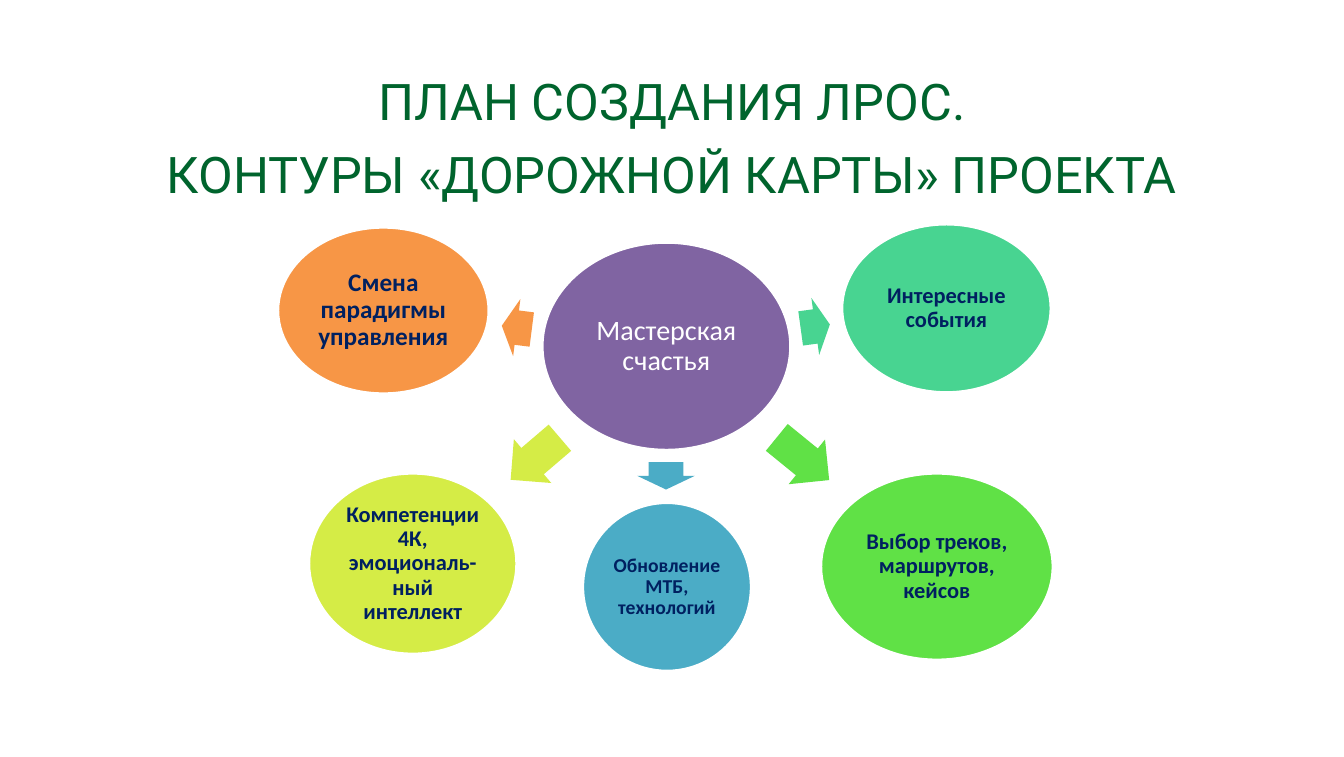
from pptx import Presentation
from pptx import util as u
from pptx.dml import color
from pptx.enum import shapes, text

WHITE, NAVY, GREEN = "FFFFFF", "002060", "00642D"
THEMES = [
    ("Обновление МТБ, технологий", 14, "4BACC6",
     (14.66, 12.65, 4.24, 4.24), (16.41, 11.25, 0.69), 90),
    ("Интересные события", 16, "48D491",
     (21.18, 5.64, 5.26, 4.24), (20.14, 7.49, 0.74), 352.2),
    ("Выбор треков, маршрутов, кейсов", 16, "60E146",
     (20.65, 11.91, 5.84, 4.7), (19.35, 10.82, 1.7), 39.2),
    ("Компетенции 4К, эмоциональ-ный интеллект", 16, "D5EC46",
     (7.77, 11.91, 5.23, 4.55), (12.65, 10.82, 1.63), 139.5),
    ("Смена парадигмы управления", 18, "F79646",
     (6.99, 5.72, 5.31, 4.19), (12.62, 7.52, 0.76), 187.2),
]


def rgb(code):
    return color.RGBColor.from_string(code)


def write(shape, words, size, ink, font="Calibri", bold=False, gap=0,
          inset=0.06, anchor=text.MSO_ANCHOR.MIDDLE):
    frame = shape.text_frame
    frame.text = words
    frame.word_wrap = True
    frame.auto_size = text.MSO_AUTO_SIZE.NONE
    frame.vertical_anchor = anchor
    frame.margin_left = frame.margin_right = u.Cm(inset)
    frame.margin_top = frame.margin_bottom = u.Cm(inset)
    for rank, para in enumerate(frame.paragraphs):
        para.alignment = text.PP_ALIGN.CENTER
        para.line_spacing = 0.9
        para.space_before = u.Pt(gap if rank else 0)
        face = para.font
        face.name, face.size, face.bold = font, u.Pt(size), bold
        face.color.rgb = rgb(ink)


def draw(slide, kind, box, fill):
    shape = slide.shapes.add_shape(kind, *map(u.Cm, box))
    shape.shadow.inherit = False
    shape.fill.solid()
    shape.fill.fore_color.rgb = rgb(fill)
    shape.line.fill.background()
    return shape


def bubble(slide, box, fill, words, size, ink=NAVY, bold=True):
    shape = draw(slide, shapes.MSO_SHAPE.OVAL, box, fill)
    shape.line.color.rgb = rgb(WHITE)
    shape.line.width = u.Pt(2)
    write(shape, words, size, ink, bold=bold)


def arrow(slide, spot, fill, turn):
    shape = draw(slide, shapes.MSO_SHAPE.RIGHT_ARROW, (*spot, 1.45), fill)
    shape.adjustments[0] = 0.6
    shape.adjustments[1] = 0.5
    shape.rotation = turn


def head(slide, words):
    title = slide.shapes.title
    title.left, title.top = u.Cm(0), u.Cm(1.93)
    title.width, title.height = u.Cm(33.81), u.Cm(3.23)
    write(title, words, 36, GREEN, font="Roboto", gap=13.3, inset=0,
          anchor=text.MSO_ANCHOR.TOP)


def main():
    deck = Presentation()
    deck.slide_width, deck.slide_height = u.Cm(33.81), u.Cm(19.05)
    slide = deck.slides.add_slide(deck.slide_layouts[5])
    head(slide, "ПЛАН СОЗДАНИЯ ЛРОС.\nКОНТУРЫ «ДОРОЖНОЙ КАРТЫ» ПРОЕКТА")
    bubble(slide, (13.64, 6.1, 6.25, 5.23), "8064A2",
           "Мастерская счастья", 20, ink=WHITE, bold=False)
    for words, size, fill, box, spot, turn in THEMES:
        arrow(slide, spot, fill, turn)
        bubble(slide, box, fill, words, size)
    deck.save("out.pptx")


if __name__ == "__main__":
    main()
